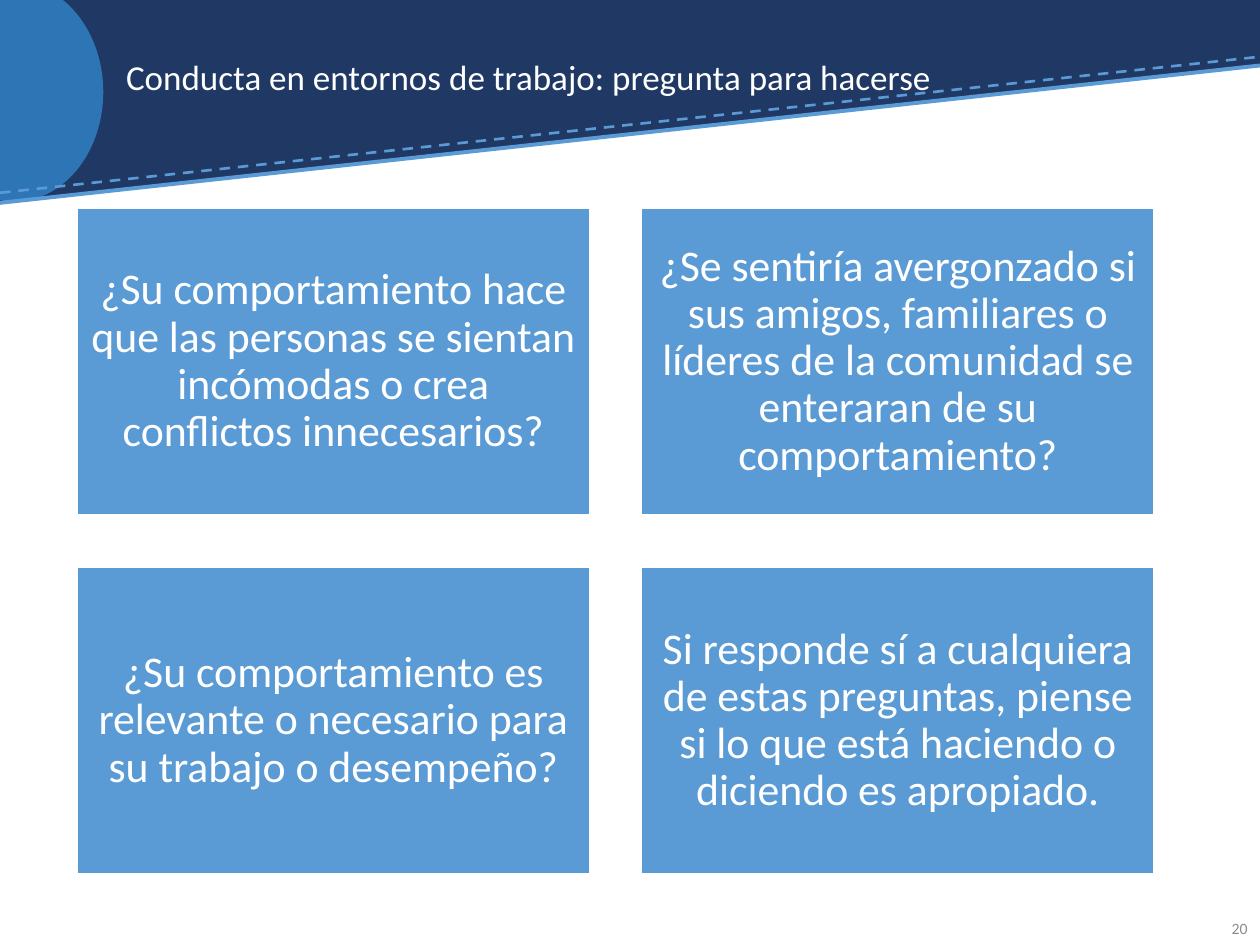
from dataclasses import dataclass
from lxml.etree import SubElement
from pptx import Presentation
from pptx.dml.color import RGBColor as RGB
from pptx.enum.dml import MSO_LINE as Dash
from pptx.enum.shapes import MSO_CONNECTOR as Link, MSO_SHAPE as Kind
from pptx.enum.text import MSO_ANCHOR as Anchor, MSO_AUTO_SIZE as Fit, PP_ALIGN as Align
from pptx.oxml.ns import qn
from pptx.util import Inches, Pt

NAVY = RGB(0x20, 0x38, 0x64)
BLUE = RGB(0x2E, 0x75, 0xB6)
SKY = RGB(0x5B, 0x9B, 0xD5)
WHITE = RGB(0xFF, 0xFF, 0xFF)
GRAY = RGB(0x8C, 0x8C, 0x8C)
WIDE, HIGH = 10, 7.5
COLS = 2


@dataclass(frozen=True)
class Box:
    left: float
    top: float
    width: float
    height: float

    def place(self) -> tuple:
        return tuple(map(Inches, (self.left, self.top, self.width, self.height)))


@dataclass(frozen=True)
class Grid:
    first: Box
    step_x: float
    step_y: float

    def cell(self, col: int, row: int) -> Box:
        base = self.first
        return Box(base.left + col * self.step_x, base.top + row * self.step_y,
                   base.width, base.height)


@dataclass(frozen=True)
class Part:
    kind: Kind
    box: Box
    fill: RGB
    flip: bool = False


@dataclass(frozen=True)
class Edge:
    start: float
    end: float
    width: float
    dash: bool = False


BAND = (
    Part(Kind.RECTANGLE, Box(0, 0, WIDE, 0.52), NAVY),
    Part(Kind.RIGHT_TRIANGLE, Box(0, 0.51, WIDE, 1.09), NAVY, True),
    Part(Kind.OVAL, Box(-0.59, -0.14, 1.41, 1.74), BLUE),
)
EDGES = (Edge(1.53, 0.45, 1.5, True), Edge(1.61, 0.52, 2.25))
CARDS = Grid(Box(0.61, 1.65, 4.07, 2.44), 4.48, 2.85)
ASKS = (
    "¿Su comportamiento hace que las personas se sientan incómodas o crea conflictos innecesarios?",
    "¿Se sentiría avergonzado si sus amigos, familiares o líderes de la comunidad se enteraran de su comportamiento?",
    "¿Su comportamiento es relevante o necesario para su trabajo o desempeño?",
    "Si responde sí a cualquiera de estas preguntas, piense si lo que está haciendo o diciendo es apropiado.",
)


def draw_part(slide, part: Part):
    shape = slide.shapes.add_shape(part.kind, *part.box.place())
    shape.shadow.inherit = False
    shape.fill.solid()
    shape.fill.fore_color.rgb = part.fill
    shape.line.fill.background()
    if part.flip:
        shape.element.spPr.find(qn("a:xfrm")).set("flipV", "1")
    return shape


def draw_edge(slide, edge: Edge) -> None:
    line = slide.shapes.add_connector(
        Link.STRAIGHT, 0, Inches(edge.start), Inches(WIDE), Inches(edge.end))
    line.line.color.rgb = SKY
    line.line.width = Pt(edge.width)
    if edge.dash:
        line.line.dash_style = Dash.DASH
    SubElement(line.element.spPr, qn("a:effectLst"))


def write(shape, text: str, size: float, color: RGB, align: Align,
          space: float = 1, after: float = 0) -> None:
    frame = shape.text_frame
    frame.word_wrap = True
    frame.auto_size = Fit.NONE
    frame.vertical_anchor = Anchor.MIDDLE
    para = frame.paragraphs[0]
    para.alignment = align
    para.line_spacing = space
    para.space_before = Pt(0)
    para.space_after = Pt(after)
    run = para.add_run()
    run.text = text
    run.font.name = "Calibri"
    run.font.size = Pt(size)
    run.font.color.rgb = color


def draw_card(slide, box: Box, text: str) -> None:
    card = draw_part(slide, Part(Kind.RECTANGLE, box, SKY))
    card.line.color.rgb = WHITE
    card.line.width = Pt(1)
    frame = card.text_frame
    frame.margin_left = frame.margin_right = Inches(0.1)
    frame.margin_top = frame.margin_bottom = Inches(0.1)
    write(card, text, 25, WHITE, Align.CENTER, 0.9, 8.75)


def main() -> None:
    deck = Presentation()
    deck.slide_width, deck.slide_height = Inches(WIDE), Inches(HIGH)
    slide = deck.slides.add_slide(deck.slide_layouts[5])
    for part in BAND:
        draw_part(slide, part)
    for edge in EDGES:
        draw_edge(slide, edge)

    title = slide.shapes.title
    title.element.getparent().append(title.element)
    title.left, title.top, title.width, title.height = Box(0.9, 0.2, 8.05, 0.86).place()
    write(title, "Conducta en entornos de trabajo: pregunta para hacerse",
          20, WHITE, Align.LEFT, 0.9)

    number = slide.shapes.add_textbox(*Box(9.47, 7.17, 0.53, 0.4).place())
    write(number, "20", 9, GRAY, Align.RIGHT, after=6)

    for spot, ask in enumerate(ASKS):
        row, col = divmod(spot, COLS)
        draw_card(slide, CARDS.cell(col, row), ask)
    deck.save("out.pptx")


if __name__ == "__main__":
    main()
